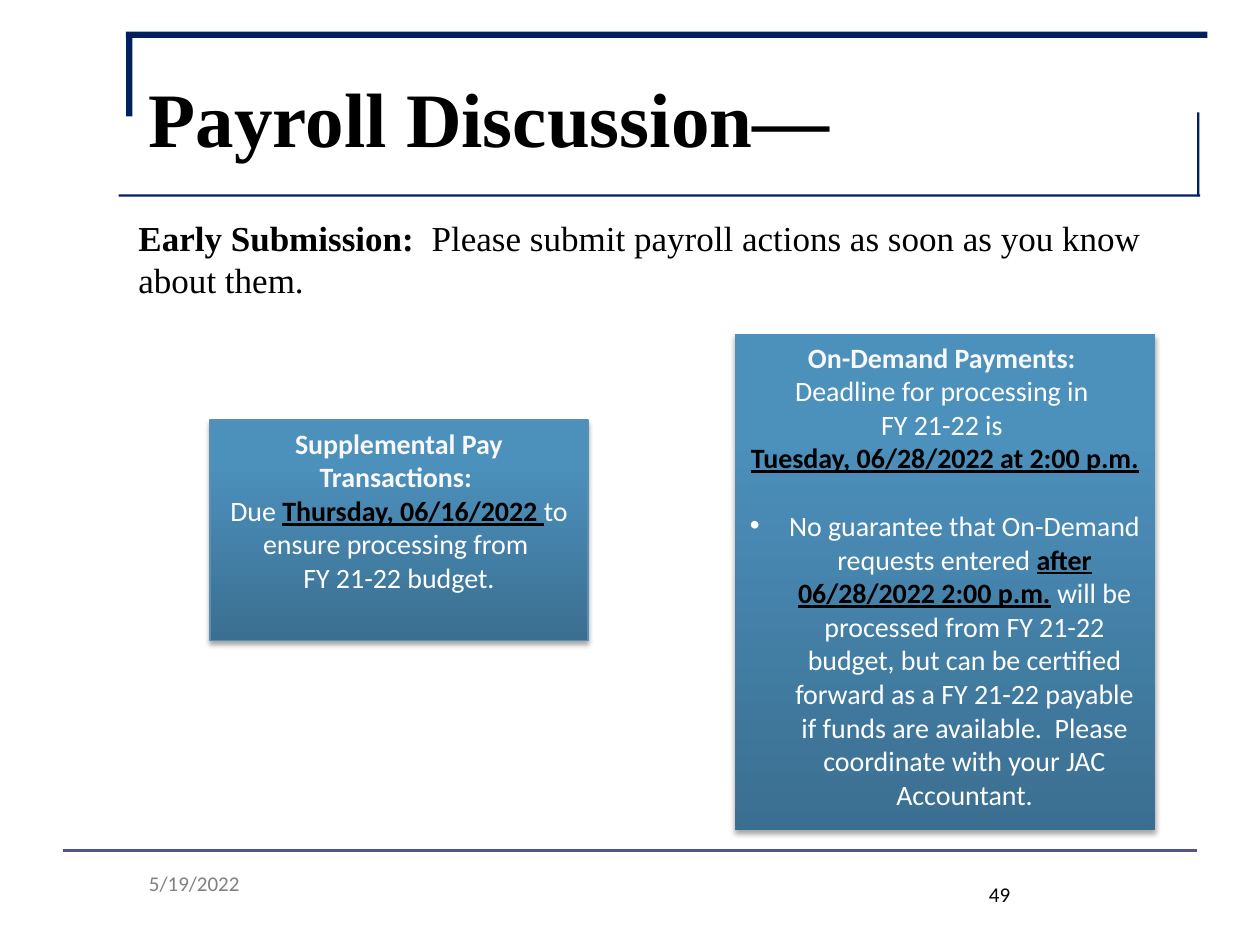
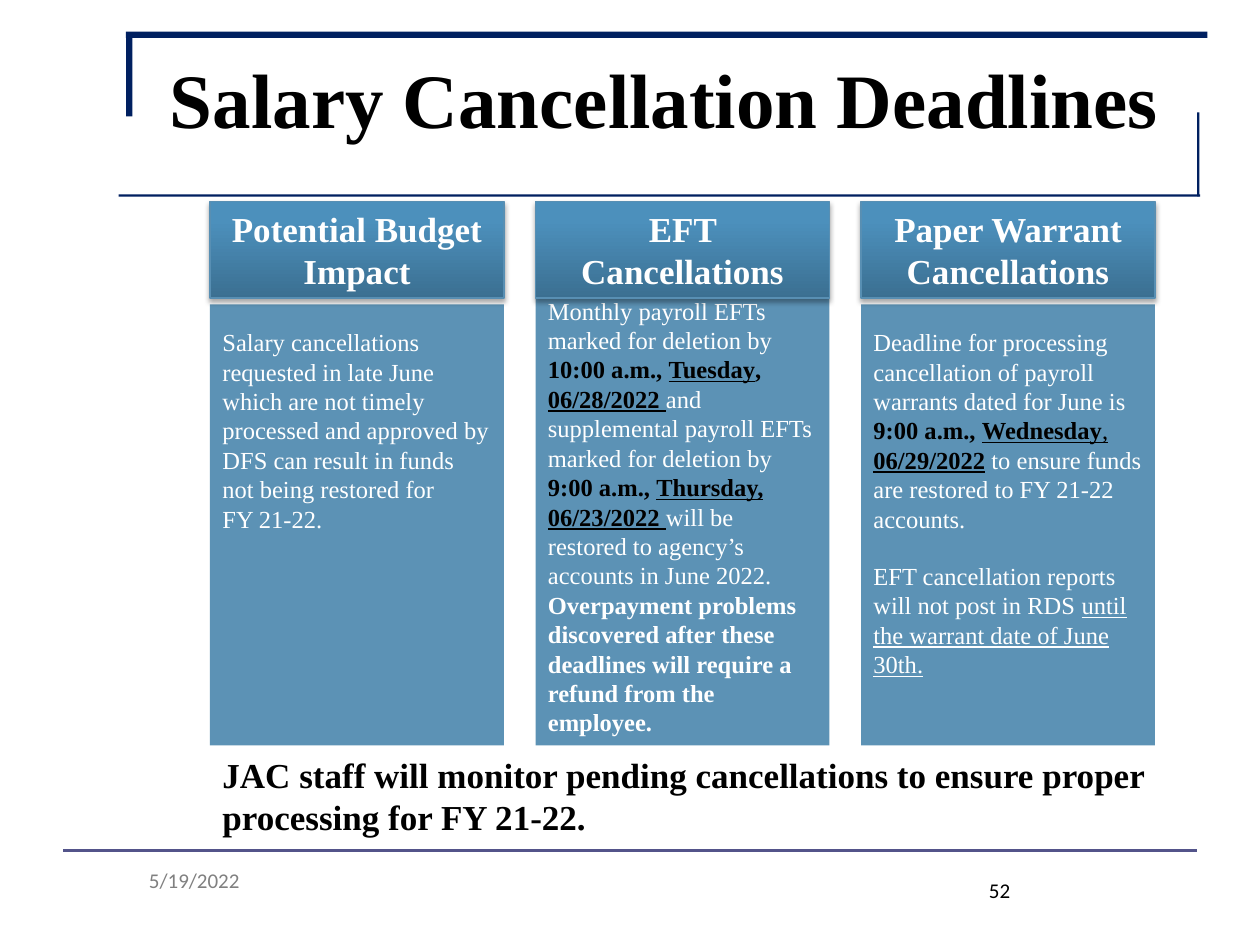
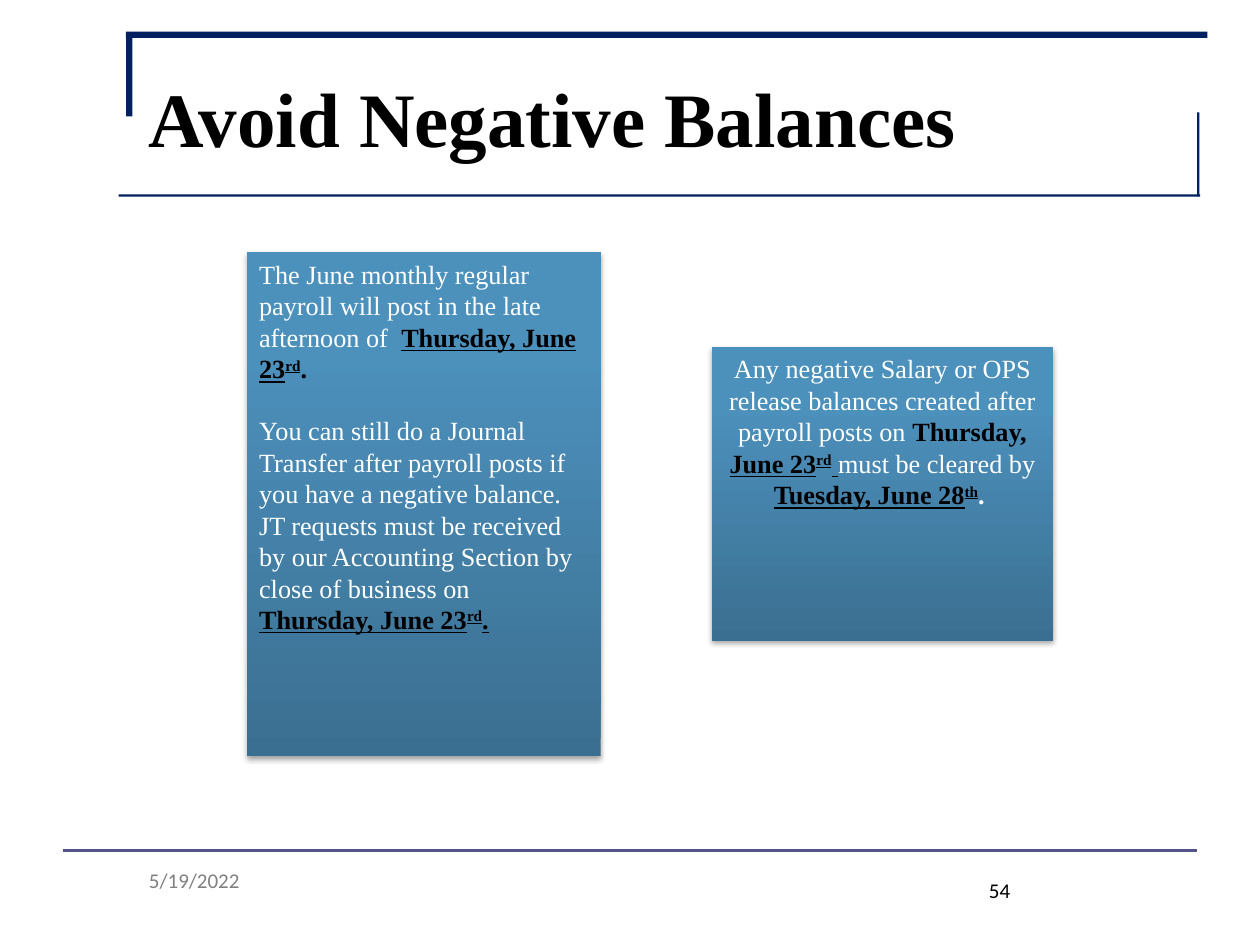
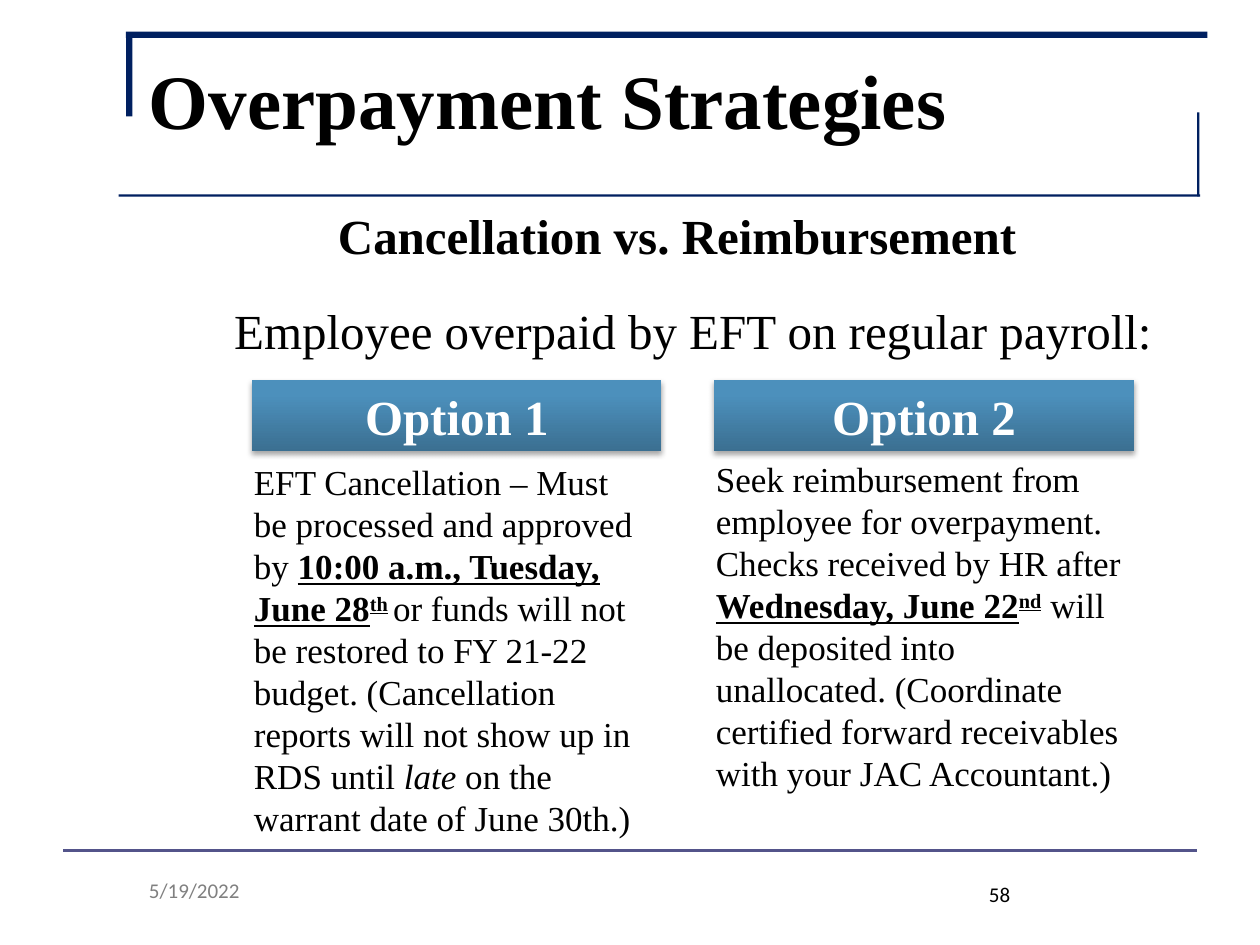
from copy import deepcopy
from dataclasses import dataclass

from lxml.etree import SubElement
from pptx import Presentation
from pptx.dml.color import RGBColor
from pptx.enum.shapes import MSO_CONNECTOR, MSO_SHAPE
from pptx.enum.text import MSO_ANCHOR, PP_ALIGN
from pptx.oxml.ns import qn
from pptx.util import Inches, Pt

BLACK = RGBColor(0x00, 0x00, 0x00)
WHITE = RGBColor(0xFF, 0xFF, 0xFF)
PALE = RGBColor(0xF8, 0xF8, 0xF8)
GRAY = RGBColor(0x80, 0x80, 0x80)
NAVY = RGBColor(0x00, 0x20, 0x60)
VIOLET = RGBColor(0x53, 0x54, 0x8A)
STEEL = RGBColor(0x5C, 0x92, 0xB5)
EDGE = RGBColor(0x58, 0x8F, 0xB3)
GRADIENT = [(0, RGBColor(0x3B, 0x6F, 0x91)),
            (0.8, RGBColor(0x4C, 0x90, 0xBC)),
            (1, RGBColor(0x4A, 0x91, 0xBF))]

SERIF = "Times New Roman"
SANS = "Calibri"
DATE = "5/19/2022"

# The slide is a grid of 120 columns by 90 rows; every box is
# (column, row, columns, rows).
WIDTH, HEIGHT = Inches(10), Inches(7.5)
COLUMNS, ROWS = 120, 90
TITLE_BOX = (13, 3.6, 101, 15)
FRAME_BARS = [(11.3, 18.5, 103, 0.24), (12, 3, 103, 0.6),
              (12, 3.1, 0.6, 8), (114, 10.7, 0.24, 8)]


@dataclass
class Para:
    """Spans are (text, flags): b bold, u underline, i italic,
    s superscript, k black, p pale."""
    spans: list
    gap: float = 0
    bullet: bool = False


def cells(column, row, columns, rows):
    return (round(WIDTH * column / COLUMNS), round(HEIGHT * row / ROWS),
            round(WIDTH * columns / COLUMNS), round(HEIGHT * rows / ROWS))


def add_bullet(para):
    properties = para._p.get_or_add_pPr()
    indent = Inches(0.31)
    properties.set("marL", str(indent))
    properties.set("indent", str(-indent))
    SubElement(properties, qn("a:buFont")).set("typeface", "Arial")
    SubElement(properties, qn("a:buChar")).set("char", "•")


def write(shape, paras, size, color=BLACK, font=SERIF, align=PP_ALIGN.LEFT,
          anchor=MSO_ANCHOR.TOP, wrap=True):
    frame = shape.text_frame
    frame.word_wrap = wrap
    frame.vertical_anchor = anchor
    for index, content in enumerate(paras):
        para = frame.add_paragraph() if index else frame.paragraphs[0]
        para.alignment = align
        if content.gap:
            para.space_before = Pt(content.gap)
        if content.bullet:
            add_bullet(para)
        for text, flags in content.spans:
            span = para.add_run()
            span.text = text
            span.font.name, span.font.size = font, Pt(size)
            span.font.bold = "b" in flags
            span.font.italic = "i" in flags
            span.font.underline = "u" in flags
            span.font.color.rgb = (BLACK if "k" in flags else
                                   PALE if "p" in flags else color)
            if "s" in flags:
                span._r.get_or_add_rPr().set("baseline", "30000")


def add_text(page, box, paras, size, **style):
    shape = page.shapes.add_textbox(*cells(*box))
    write(shape, paras, size, **style)
    return shape


def add_panel(page, box, color=None, kind=MSO_SHAPE.RECTANGLE):
    shape = page.shapes.add_shape(kind, *cells(*box))
    shape.shadow.inherit = False
    shape.line.fill.background()
    if color is not None:
        shape.fill.solid()
        shape.fill.fore_color.rgb = color
    return shape


def add_glossy(page, box, edge=False, kind=MSO_SHAPE.RECTANGLE):
    """Panel with the shared blue gradient and soft shadow."""
    shape = add_panel(page, box, kind=kind)
    fill = shape.fill
    fill.gradient()
    fill.gradient_angle = 90
    stops = shape._element.spPr.find(".//" + qn("a:gsLst"))
    stops.append(deepcopy(stops[0]))
    for stop, (position, color) in zip(fill.gradient_stops, GRADIENT):
        stop.position = position
        stop.color.rgb = color
    if edge:
        shape.line.color.rgb = EDGE
        shape.line.width = Pt(0.75)
    effects = shape._element.spPr.find(qn("a:effectLst"))
    shadow = SubElement(effects, qn("a:outerShdw"), blurRad=str(Pt(3.1)),
                        dist=str(Pt(1.8)), dir="5400000", rotWithShape="0")
    tint = SubElement(shadow, qn("a:srgbClr"), val="000000")
    SubElement(tint, qn("a:alpha"), val="35000")
    return shape


def add_callout(page, box, pointer, paras, size, edge=False, **style):
    shape = add_glossy(page, box, edge, MSO_SHAPE.LINE_CALLOUT_2)
    for index, share in enumerate(pointer):
        shape.adjustments[index] = share
    write(shape, paras, size, color=WHITE, **style)


def add_heading(page, box, text, size, edge=False):
    shape = add_glossy(page, box, edge)
    write(shape, [Para([(text, "b")])], size, color=WHITE,
          align=PP_ALIGN.CENTER, anchor=MSO_ANCHOR.MIDDLE)


def add_page(deck, title, box=TITLE_BOX, lift=0):
    """Page with rule, frame bars and title; lift raises the title."""
    page = deck.slides.add_slide(deck.slide_layouts[6])
    left, top, width, _ = cells(6, 81, 108, 0)
    rule = page.shapes.add_connector(MSO_CONNECTOR.STRAIGHT,
                                     left, top, left + width, top)
    rule.line.color.rgb = VIOLET
    rule.line.width = Pt(1.5)
    SubElement(rule._element.spPr, qn("a:effectLst"))
    for bar in FRAME_BARS:
        add_panel(page, bar, NAVY)
    shape = add_text(page, box, [Para([(title, "b")])], 44,
                     anchor=MSO_ANCHOR.MIDDLE)
    shape.text_frame.margin_bottom = Inches(0.05 + lift)
    return page


def add_footer(page, number, date_row=82, number_row=83):
    add_text(page, (93, number_row, 9, 3.6), [Para([(number, "")])], 12,
             font=SANS)
    add_text(page, (13, date_row, 11.2, 3.6), [Para([(DATE, "")])], 12,
             color=GRAY, font=SANS, wrap=False)


def add_column_card(page, box, heading, paras, body_row=9.8):
    column, row, columns, rows = box
    body = add_panel(page, (column, row + body_row, columns, rows - body_row),
                     STEEL)
    body.text_frame.margin_top = Inches(0.18)
    write(body, paras, 14, color=WHITE)
    add_heading(page, (column, row, columns, 9.2), heading, 20, edge=True)


def add_option(page, box, heading, spans, text_row):
    column, row, columns, rows = box
    add_heading(page, (column + 1, row, columns - 1, 6.8), heading, 28)
    add_text(page, (column, row + text_row, columns, rows - text_row),
             [Para(spans)], 20)


def build_payroll(deck):
    page = add_page(deck, "Payroll Discussion—")
    add_text(page, (12, 20, 106, 9.2), [Para([
        ("Early Submission:  ", "b"),
        ("Please submit payroll actions as soon as you know about them.", ""),
    ])], 20)
    centred = {"font": SANS, "align": PP_ALIGN.CENTER}
    add_callout(page, (70, 31.8, 40, 47.2),
                (-0.06, 0.25, 0, 0.45, -0.1, 0.16), [
        Para([("On-Demand Payments: ", "bp")]),
        Para([("Deadline for processing in ", "")]),
        Para([("FY 21-22 is ", "")]),
        Para([("Tuesday, 06/28/2022 at 2:00 p.m.", "kbu")]),
        Para([("No guarantee that On-Demand requests entered ", ""),
              ("after", "kbu"), (" ", "ku"),
              ("06/28/2022 2:00 p.m.", "kbu"),
              (" will be processed from FY 21-22 budget, but can be "
               "certified forward as a FY 21-22 payable if funds are "
               "available.  Please coordinate with your JAC Accountant.", "")],
             gap=19.5, bullet=True),
    ], 16, **centred)
    add_callout(page, (20, 40, 36, 21), (0.01, 0.32, 0.02, 0.32, 0, 0.3), [
        Para([("Supplemental Pay Transactions: ", "bp")]),
        Para([("Due ", ""), ("Thursday,", "kbu"), (" ", "ku"),
              ("06/16/2022 ", "kbu"), ("to ensure processing from ", "")]),
        Para([("FY 21-22 budget.", "")]),
    ], 16, edge=True, **centred)
    add_footer(page, "49", 82.3, 83.4)


def build_cancellations(deck):
    page = add_page(deck, "Salary Cancellation Deadlines", (15, 5, 100, 12),
                    lift=0.28)
    cards = [
        ("Potential Budget Impact", 9.8, [
            Para([("Salary cancellations requested in late June which are "
                   "not timely processed and approved by DFS can result in "
                   "funds not being restored for", "")]),
            Para([("FY 21-22.", "")])]),
        ("EFT Cancellations", 6.8, [
            Para([("Monthly payroll EFTs marked for deletion by ", ""),
                  ("10:00 a.m., ", "kb"), ("Tuesday", "kbu"), (", ", "kb"),
                  ("06/28/2022 ", "kbu"),
                  ("and supplemental payroll EFTs marked for deletion by ",
                   ""),
                  ("9:00 a.m., ", "kb"), ("Thursday,", "kbu"), (" ", "ku"),
                  ("06/23/2022 ", "kbu"),
                  ("will be restored to agency’s accounts in June 2022.  ",
                   ""),
                  ("Overpayment problems discovered after these deadlines "
                   "will require a refund from the employee.", "b")])]),
        ("Paper Warrant Cancellations", 9.8, [
            Para([("Deadline for processing cancellation of payroll warrants "
                   "dated for June is ", ""),
                  ("9:00 a.m., ", "kb"), ("Wednesday", "kbu"), (", ", "ku"),
                  ("06/29/2022", "kbu"),
                  (" to ensure funds are restored to FY 21-22 accounts.",
                   "")]),
            Para([("EFT cancellation reports will not post in RDS ", ""),
                  ("until the warrant date of June 30th.", "u")], gap=16)]),
    ]
    for index, (heading, body_row, paras) in enumerate(cards):
        add_column_card(page, (20 + 31 * index, 19.2, 28, 51.8), heading,
                        paras, body_row)
    note = add_panel(page, (20, 71.2, 93, 9.2), WHITE)
    write(note, [Para([("JAC staff will monitor pending cancellations to "
                        "ensure proper processing for FY 21-22.", "b")])], 20)
    add_footer(page, "52")


def build_balances(deck):
    page = add_page(deck, "Avoid Negative Balances")
    add_callout(page, (23.5, 24, 33.7, 48), (0.98, 1.01, 0.99, 1, 1, 0.99), [
        Para([("The June monthly regular payroll will post in the late "
               "afternoon of  ", ""),
              ("Thursday, June 23", "kbu"), ("rd", "kbus"), (".", "kb")]),
        Para([("You can still do a Journal Transfer after payroll posts if "
               "you have a negative balance. JT requests must be received by "
               "our Accounting Section by close of business on ", ""),
              ("Thursday, June 23", "kbu"), ("rd", "kbus"), (".", "kbu")],
             gap=17.25),
    ], 15)
    add_callout(page, (67.8, 33, 32.5, 28),
                (1, 0.47, 1.01, 0.47, 1.01, 0.47), [
        Para([("Any negative Salary or OPS release balances created after "
               "payroll posts on ", ""),
              ("Thursday, ", "kb"), ("June 23", "kbu"), ("rd", "kbus"),
              (" ", "kbu"), ("must be cleared by ", ""),
              ("Tuesday, June 28", "kbu"), ("th", "kbus"), (". ", "b")]),
    ], 15, align=PP_ALIGN.CENTER)
    add_footer(page, "54")


def build_overpayment(deck):
    page = add_page(deck, "Overpayment Strategies", lift=0.28)
    add_text(page, (31, 19, 86, 6.8),
             [Para([("Cancellation vs. Reimbursement", "b")])], 28)
    add_text(page, (13, 28, 106, 6.8),
             [Para([("Employee overpaid by EFT on regular payroll:", "")])],
             28, align=PP_ALIGN.CENTER)
    add_option(page, (23, 36.2, 40, 44.6), "Option 1", [
        ("EFT Cancellation – Must be processed and approved by ", ""),
        ("10:00 a.m., Tuesday, June 28", "bu"), ("th", "bus"), (" ", "bs"),
        ("or funds will not be restored to FY 21-22 budget. (Cancellation "
         "reports will not show up in RDS until ", ""),
        ("late", "i"), (" on the warrant date of June 30th.)", ""),
    ], text_row=7.1)
    add_option(page, (67, 36.2, 41, 40.3), "Option 2", [
        ("Seek reimbursement from employee for overpayment.  Checks received "
         "by HR after ", ""),
        ("Wednesday, June 22", "bu"), ("nd", "bus"),
        (" will be deposited into unallocated. (Coordinate certified forward "
         "receivables with your JAC Accountant.)", ""),
    ], text_row=6.8)
    add_footer(page, "58", 83, 83.4)


def main():
    deck = Presentation()
    deck.slide_width, deck.slide_height = WIDTH, HEIGHT
    for build in (build_payroll, build_cancellations, build_balances,
                  build_overpayment):
        build(deck)
    deck.save("out.pptx")


if __name__ == "__main__":
    main()
